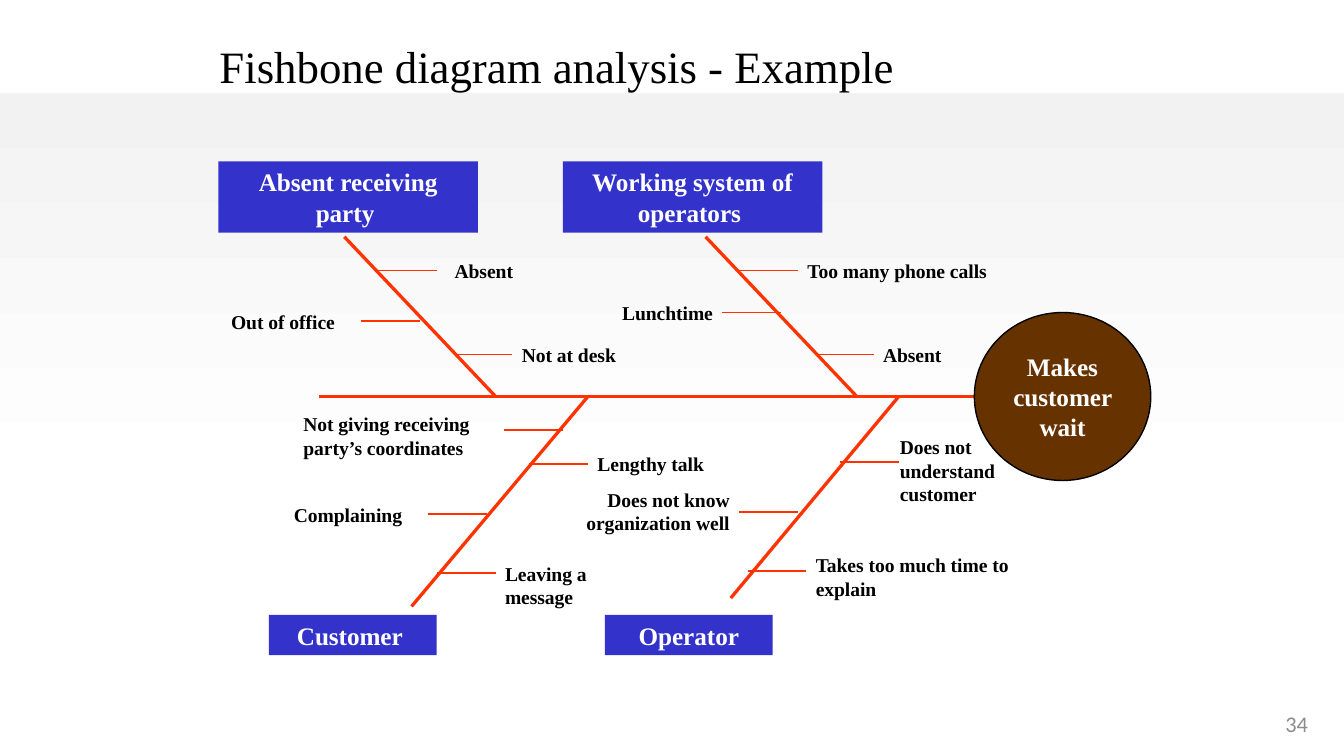
from dataclasses import dataclass

from lxml.etree import SubElement
from pptx import Presentation
from pptx.dml.color import RGBColor
from pptx.enum.shapes import MSO_CONNECTOR, MSO_SHAPE
from pptx.enum.text import MSO_ANCHOR, PP_ALIGN
from pptx.oxml.ns import qn
from pptx.util import Inches, Pt

WIDE = 10
HIGH = WIDE * 9 / 16
UNIT = WIDE / 160   # grid step in inches; columns run from the left edge
SPINE = 47.2        # grid row of the spine; other rows are counted from it
RED, BLUE, BROWN = "FF3300", "3333CC", "663300"
BLACK, WHITE, GREY = "000000", "FFFFFF", "8C8C8C"
SERIF = "Times New Roman"
LEFT, MID, RIGHT = PP_ALIGN.LEFT, PP_ALIGN.CENTER, PP_ALIGN.RIGHT


@dataclass
class Cause:
    text: str
    col: float
    width: float
    height: float
    row: float


@dataclass
class Bone:
    foot: float
    tip: float
    row: float


@dataclass
class Twig:
    text: str
    tick: float
    row: float
    col: float
    width: float
    lines: int = 1
    lift: float = 2
    align: PP_ALIGN = LEFT


CAUSES = [
    Cause("Absent receiving party ", 26, 30.9, 8.5, -28),
    Cause("Working system of operators ", 67, 30.9, 8.5, -28),
    Cause("Customer ", 32, 20, 4.8, 26),
    Cause("Operator", 72, 20, 4.8, 26),
]
BONES = [Bone(102, 84, -19), Bone(107, 87, 24),
         Bone(70, 49, 25), Bone(59, 41, -19)]
TWIGS = [
    Twig("Absent", 45, -15, 53, 12),
    Twig("Out of office", 43, -9, 24, 17, align=RIGHT),
    Twig("Not at desk", 54, -5, 61, 17),
    Twig("Too many phone calls", 88, -15, 95, 25),
    Twig("Lunchtime", 86, -10, 69, 17, align=RIGHT),
    Twig("Absent", 97, -5, 104, 12),
    Twig("Not giving receiving party’s coordinates", 60, 4, 35, 23, 2, 2.8),
    Twig("Lengthy talk", 63, 8, 70, 17),
    Twig("Complaining", 51, 14, 32, 17, align=RIGHT),
    Twig("Leaving a message", 52, 21, 59, 17, 2),
    Twig("Does not understand customer", 100, 7.8, 106, 15, 3, 3.8),
    Twig("Does not know organization well", 88, 13.8, 67, 21, 2, 3.6, RIGHT),
    Twig("Takes too much time to explain", 89, 20.8, 96, 26, 2, 2.8),
]

deck = Presentation()
deck.slide_width, deck.slide_height = Inches(WIDE), Inches(HIGH)
slide = deck.slides.add_slide(deck.slide_layouts[6])
shapes = slide.shapes


def tint(code: str) -> RGBColor:
    return RGBColor.from_string(code)


def place(col: float, row: float, width: float, height: float) -> list:
    """Turn grid values, with the row counted from the spine, into lengths."""
    return [Inches(n * UNIT) for n in (col, SPINE + row, width, height)]


def write(shape, text: str, size: float, color: str, align=LEFT, bold=True,
          name=SERIF, anchor=MSO_ANCHOR.TOP, side=0.07) -> None:
    frame = shape.text_frame
    look = dict(word_wrap=True, vertical_anchor=anchor,
                margin_left=Inches(side), margin_right=Inches(side),
                margin_top=Inches(0.04), margin_bottom=Inches(0.04))
    for key, value in look.items():
        setattr(frame, key, value)
    para = frame.paragraphs[0]
    para.alignment = align
    run = para.add_run()
    run.text = text
    for key, value in dict(size=Pt(size), name=name, bold=bold).items():
        setattr(run.font, key, value)
    run.font.color.rgb = tint(color)


def label(text: str, spot: list, size: float, color=BLACK, **look) -> None:
    write(shapes.add_textbox(*spot), text, size, color, **look)


def block(kind: MSO_SHAPE, spot: list, color: str):
    shape = shapes.add_shape(kind, *spot)
    shape.shadow.inherit = False
    shape.fill.solid()
    shape.fill.fore_color.rgb = tint(color)
    shape.line.fill.background()
    return shape


def stroke(col: float, row: float, end: float, stop: float,
           weight: float) -> None:
    x, y, *_ = place(col, row, 0, 0)
    u, v, *_ = place(end, stop, 0, 0)
    line = shapes.add_connector(MSO_CONNECTOR.STRAIGHT, x, y, u, v)
    line.line.color.rgb = tint(RED)
    line.line.width = Pt(weight)
    SubElement(line._element.spPr, qn("a:effectLst"))


def backdrop() -> None:
    top = Inches(0.69)
    shape = block(MSO_SHAPE.RECTANGLE,
                  [0, top, deck.slide_width, deck.slide_height - top], WHITE)
    shape.fill.gradient()
    shape.fill.gradient_angle = 270
    for stop, (color, share) in zip(shape.fill.gradient_stops,
                                    [("F2F2F2", 0), (WHITE, 0.58)]):
        stop.color.rgb = tint(color)
        stop.position = share


def effect() -> None:
    head = block(MSO_SHAPE.OVAL, place(116, -10, 21, 20), BROWN)
    head.line.color.rgb = tint(BLACK)
    head.line.width = Pt(0.75)
    write(head, "Makes customer wait", 13.5, WHITE, MID,
          anchor=MSO_ANCHOR.MIDDLE)


def twig(item: Twig) -> None:
    stroke(item.tick, item.row, item.tick + 7, item.row, 1)
    spot = place(item.col, item.row - item.lift, item.width,
                 1.1 + 2.9 * item.lines)
    label(item.text, spot, 10.5, align=item.align)


backdrop()
label("34", place(120, 36.6, 37.3, 4.8), 12, GREY, align=RIGHT, bold=False,
      name="Calibri", anchor=MSO_ANCHOR.MIDDLE, side=0.1)
label("Fishbone diagram analysis - Example", place(25, -43.2, 110, 7.7), 24,
      bold=False)
stroke(38, 0, 116, 0, 1.75)
effect()
for bone in BONES:
    stroke(bone.foot, 0, bone.tip, bone.row, 1.75)
for cause in CAUSES:
    spot = place(cause.col, cause.row, cause.width, cause.height)
    write(block(MSO_SHAPE.RECTANGLE, spot, BLUE), cause.text, 13.5, WHITE, MID)
for item in TWIGS:
    twig(item)

deck.save("out.pptx")
